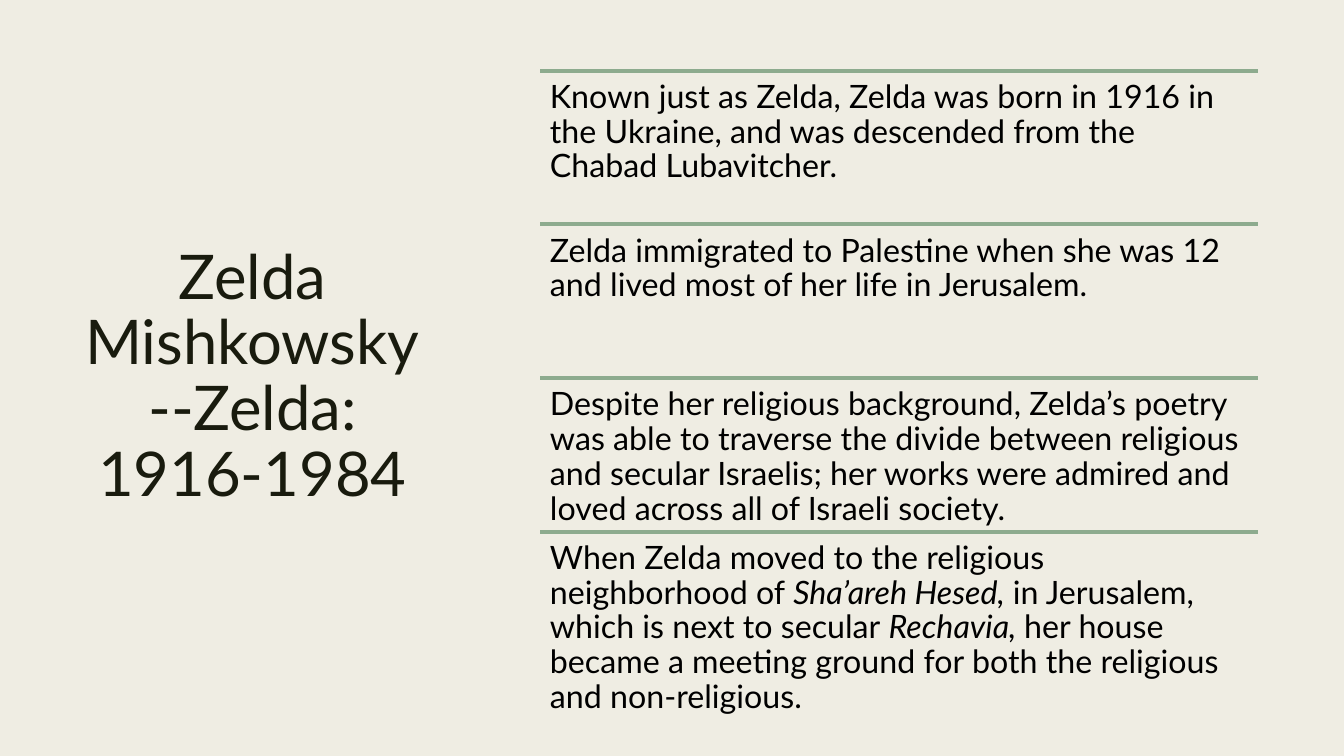
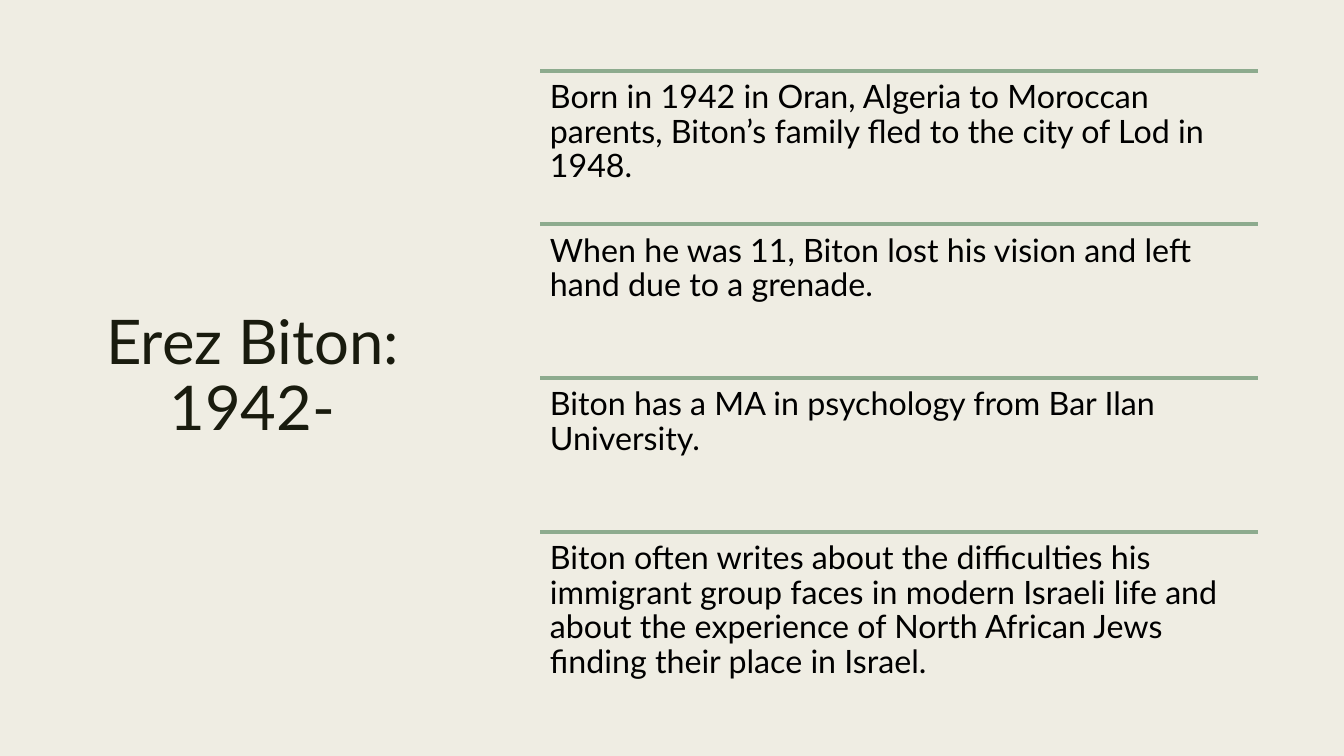
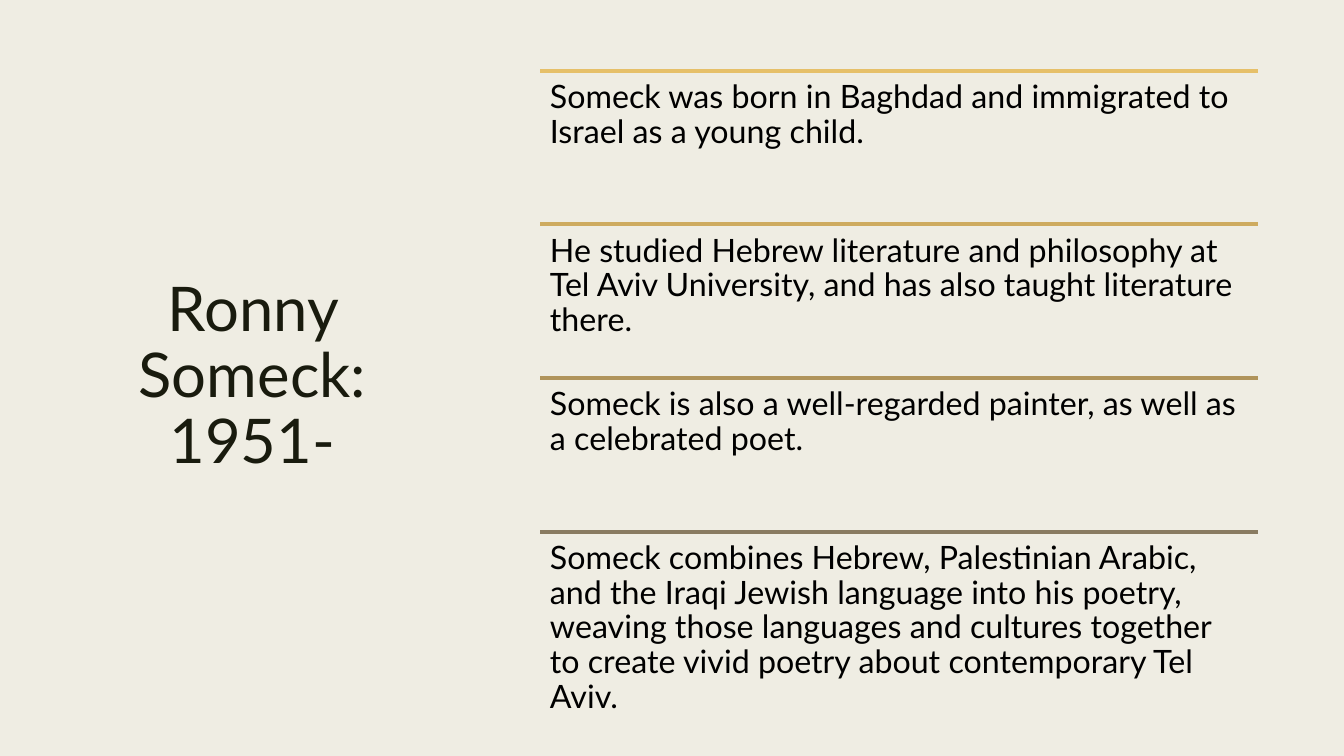
import dataclasses

import lxml.etree
import pptx
import pptx.dml.color
import pptx.enum.shapes
import pptx.enum.text
import pptx.oxml.ns
import pptx.util

Cm, Pt = pptx.util.Cm, pptx.util.Pt
RGB = pptx.dml.color.RGBColor.from_string
ALIGN = pptx.enum.text.PP_ALIGN
ANCHOR = pptx.enum.text.MSO_ANCHOR


@dataclasses.dataclass(frozen=True)
class Theme:
    """Colours, type and line sizes shared by the slides."""
    background: str = "EFEDE3"
    title: str = "191B0E"
    body: str = "000000"
    sage: tuple = ("8DAB8E",) * 4
    gold: tuple = ("E6C069", "CEAB5F", "B0945B", "897B61")
    font: str = "Lato"
    title_size: int = 44
    body_size: int = 23
    rule_width: float = 2.75
    inset: float = 0.25


THEME = Theme()
TITLE_BOX = (1.78, 1.78, 9.17, 15.49)
FACTS_BOX = (13.61, 1.78, 18.09, 15.49)

POETS = [
    ("Zelda Mishkowsky--Zelda: 1916-1984", THEME.sage, [
        ["Known just as Zelda, Zelda was born in 1916 in the Ukraine, and was "
         "descended from the Chabad Lubavitcher."],
        ["Zelda immigrated to Palestine when she was 12 and lived most of her life "
         "in Jerusalem."],
        ["Despite her religious background, Zelda’s poetry was able to traverse the "
         "divide between religious and secular Israelis; her works were admired and "
         "loved across all of Israeli society."],
        ["When Zelda moved to the religious neighborhood of ", "Sha’areh Hesed, ",
         "in Jerusalem, which is next to secular ", "Rechavia, ",
         "her house became a meeting ground for both the religious and "
         "non-religious."],
    ]),
    ("Erez Biton: 1942-", THEME.sage, [
        ["Born in 1942 in Oran, Algeria to Moroccan parents, Biton’s family fled to "
         "the city of Lod in 1948."],
        ["When he was 11, Biton lost his vision and left hand due to a grenade."],
        ["Biton has a MA in psychology from Bar Ilan University."],
        ["Biton often writes about the difficulties his immigrant group faces in "
         "modern Israeli life and about the experience of North African Jews finding "
         "their place in Israel."],
    ]),
    ("Ronny Someck: 1951-", THEME.gold, [
        ["Someck was born in Baghdad and immigrated to Israel as a young child."],
        ["He studied Hebrew literature and philosophy at Tel Aviv University, and has "
         "also taught literature there."],
        ["Someck is also a well-regarded painter, as well as a celebrated poet."],
        ["Someck combines Hebrew, Palestinian Arabic, and the Iraqi Jewish language "
         "into his poetry, weaving those languages and cultures together to create "
         "vivid poetry about contemporary Tel Aviv."],
    ]),
]


def set_all(obj, values):
    """Set each attribute named in values on obj."""
    for name, value in values.items():
        setattr(obj, name, value)


def add_text(slide, box, runs, size, color, frame, para):
    """Write one paragraph in a box; every second run is italic."""
    tf = slide.shapes.add_textbox(*map(Cm, box)).text_frame
    set_all(tf, {"word_wrap": True, **frame})
    p = tf.paragraphs[0]
    set_all(p, para)
    for i, text in enumerate(runs):
        r = p.add_run()
        r.text = text
        set_all(r.font, {"name": THEME.font, "size": Pt(size), "italic": i % 2 == 1})
        r.font.color.rgb = RGB(color)


def add_rule(slide, x, y, width, color):
    """Draw a horizontal rule."""
    ends = map(Cm, (x, y, x + width, y))
    line = slide.shapes.add_connector(pptx.enum.shapes.MSO_CONNECTOR.STRAIGHT, *ends)
    line.line.color.rgb = RGB(color)
    line.line.width = Pt(THEME.rule_width)
    lxml.etree.SubElement(line._element.spPr, pptx.oxml.ns.qn("a:effectLst"))


def add_title(slide, box, title):
    """Place the centred title in its box."""
    add_text(slide, box, [title], THEME.title_size, THEME.title,
             {"vertical_anchor": ANCHOR.MIDDLE},
             {"alignment": ALIGN.CENTER, "line_spacing": 0.89})


def add_facts(slide, box, facts, colors):
    """Stack the facts in equal rows, each under its own rule."""
    x, y, width, height = box
    row = height / len(facts)
    sides = ("left", "top", "right", "bottom")
    frame = {f"margin_{side}": Cm(THEME.inset) for side in sides}
    for i, (runs, color) in enumerate(zip(facts, colors)):
        top = y + i * row
        add_rule(slide, x, top, width, color)
        add_text(slide, (x, top, width, row), runs, THEME.body_size, THEME.body,
                 {"vertical_anchor": ANCHOR.TOP, **frame},
                 {"alignment": ALIGN.LEFT, "line_spacing": 0.9})


def main():
    """Build the deck and save it."""
    prs = pptx.Presentation()
    set_all(prs, {"slide_width": Cm(33.87), "slide_height": Cm(19.05)})
    fill = prs.slide_master.background.fill
    fill.solid()
    fill.fore_color.rgb = RGB(THEME.background)
    for title, colors, facts in POETS:
        slide = prs.slides.add_slide(prs.slide_layouts[6])
        add_title(slide, TITLE_BOX, title)
        add_facts(slide, FACTS_BOX, facts, colors)
    prs.save("out.pptx")


if __name__ == "__main__":
    main()
